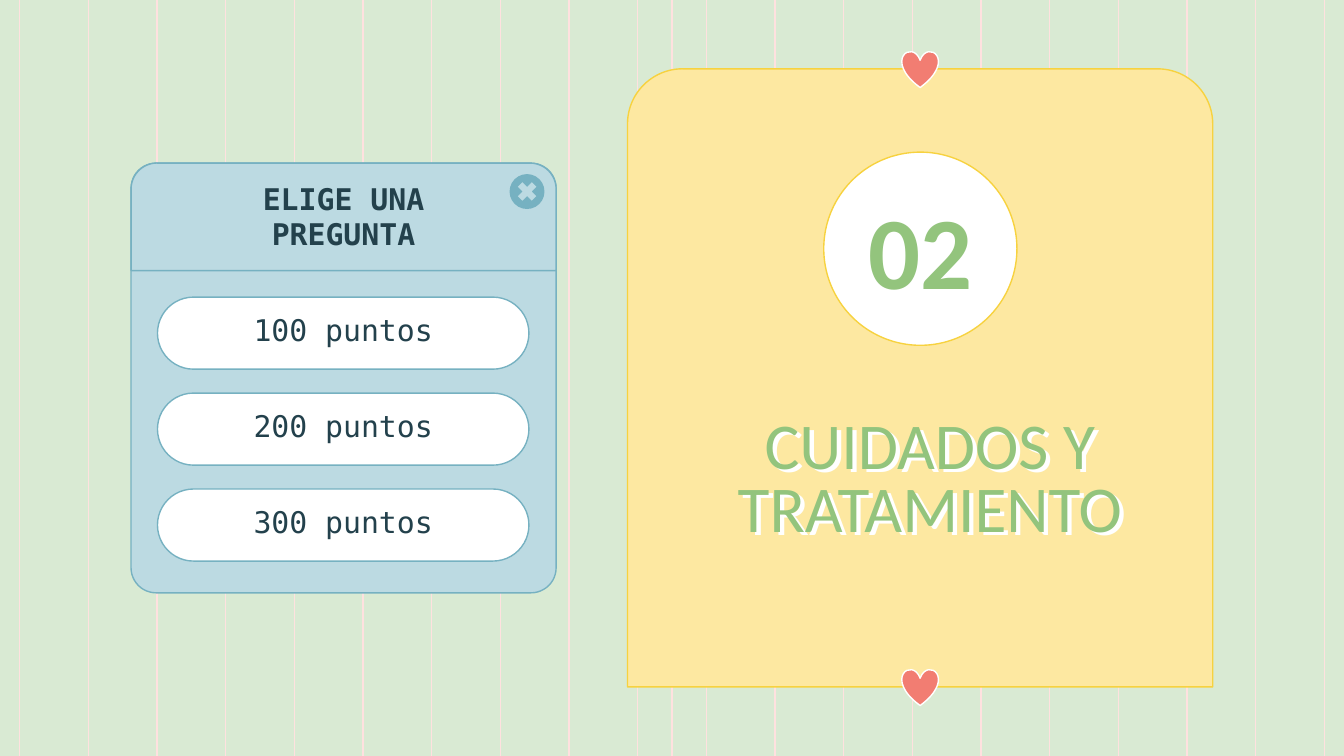
from lxml import etree
from pptx import Presentation
from pptx.dml.color import RGBColor
from pptx.enum.shapes import MSO_CONNECTOR, MSO_SHAPE
from pptx.enum.text import MSO_ANCHOR, PP_ALIGN
from pptx.oxml.ns import qn
from pptx.util import Pt

STRAIGHT = MSO_CONNECTOR.STRAIGHT
ROUNDED = MSO_SHAPE.ROUNDED_RECTANGLE
ROUNDED_TOP = MSO_SHAPE.ROUND_2_SAME_RECTANGLE
HEART = MSO_SHAPE.HEART
OVAL = MSO_SHAPE.OVAL
CROSS = MSO_SHAPE.MATH_MULTIPLY
CENTER = PP_ALIGN.CENTER
MIDDLE = MSO_ANCHOR.MIDDLE

MINT = RGBColor(0xD9, 0xEA, 0xD3)
STRIPE = RGBColor(0xFF, 0xE1, 0xDF)
CREAM = RGBColor(0xFD, 0xE8, 0xA1)
GOLD = RGBColor(0xF7, 0xD2, 0x3F)
CORAL = RGBColor(0xF2, 0x7D, 0x72)
WHITE = RGBColor(0xFF, 0xFF, 0xFF)
SKY = RGBColor(0xBC, 0xDA, 0xE2)
TEAL = RGBColor(0x76, 0xB1, 0xC1)
NAVY = RGBColor(0x23, 0x41, 0x4C)
GREEN = RGBColor(0x93, 0xC4, 0x7D)

SLIDE_WIDTH, SLIDE_HEIGHT = 720, 405
LINE_WIDTH = 0.75
MONO = "DejaVu Sans Mono"
SANS = "Calibri"


def add_stripe(slide, x):
    """Draw one vertical background line over the full slide height."""
    stripe = slide.shapes.add_connector(STRAIGHT, Pt(x), Pt(0), Pt(x), Pt(SLIDE_HEIGHT))
    stripe.line.color.rgb = STRIPE
    stripe.line.width = Pt(LINE_WIDTH)
    etree.SubElement(stripe._element.spPr, qn("a:effectLst"))


def add_panel(slide, kind, box, fill, line=None, adjustments=()):
    """Draw a filled preset shape, outlined when a line colour is given."""
    shape = slide.shapes.add_shape(kind, *map(Pt, box))
    shape.shadow.inherit = False
    shape.fill.solid()
    shape.fill.fore_color.rgb = fill
    if line is None:
        shape.line.fill.background()
    else:
        shape.line.color.rgb = line
        shape.line.width = Pt(LINE_WIDTH)
    for index, value in enumerate(adjustments):
        shape.adjustments[index] = value
    return shape


def write_text(shape, text, *, size, font, color, bold=False, spacing=None,
               insets=(7.2, 7.2, 7.2, 7.2)):
    """Fill a shape with one centred, formatted paragraph."""
    frame = shape.text_frame
    frame.word_wrap = True
    frame.vertical_anchor = MIDDLE
    (frame.margin_left, frame.margin_top,
     frame.margin_right, frame.margin_bottom) = map(Pt, insets)
    paragraph = frame.paragraphs[0]
    paragraph.alignment = CENTER
    if spacing:
        paragraph.line_spacing = spacing
    run = paragraph.add_run()
    run.text = text
    run.font.size = Pt(size)
    run.font.name = font
    run.font.bold = bold
    run.font.color.rgb = color


def add_white_shadow(shape):
    """Give the text of an unfilled shape a hard white shadow."""
    effects = etree.SubElement(shape._element.spPr, qn("a:effectLst"))
    shadow = etree.SubElement(effects, qn("a:outerShdw"), dist="38100",
                              dir="2400000", algn="bl", rotWithShape="0")
    etree.SubElement(shadow, qn("a:srgbClr"), val=str(WHITE))


def add_background(slide):
    """Colour the slide and draw its evenly spaced stripes and centre line."""
    slide.background.fill.solid()
    slide.background.fill.fore_color.rgb = MINT
    add_stripe(slide, SLIDE_WIDTH / 2)
    for index in range(20):
        add_stripe(slide, 10.6 + 36.78 * index)


def add_question_window(slide):
    """Draw the window with its header, close button and score options."""
    add_panel(slide, ROUNDED, (70.2, 87.4, 227.7, 230.2), SKY, TEAL, [0.059])
    header = add_panel(slide, ROUNDED_TOP, (70.2, 87.4, 227.7, 57.6), SKY, TEAL, [0.242, 0])
    write_text(header, "ELIGE UNA PREGUNTA", size=16, font=MONO, color=NAVY,
               bold=True, insets=(28.8, 2.2, 28.8, 7.2))
    add_panel(slide, OVAL, (273, 93.3, 18.7, 18.7), TEAL)
    add_panel(slide, CROSS, (275.2, 95.4, 14.4, 14.4), SKY, adjustments=[0.235])
    for index in range(3):
        option = add_panel(slide, ROUNDED, (84.4, 159.2 + 51.4 * index, 199, 38.6),
                           WHITE, TEAL, [0.5])
        write_text(option, f"{100 * (index + 1)} puntos", size=16, font=MONO,
                   color=NAVY, insets=(7.2, 3.6, 7.2, 7.2))


def add_section_card(slide):
    """Draw the card with hearts, section number and section title."""
    add_panel(slide, ROUNDED_TOP, (336.2, 36.9, 313.5, 331.1), CREAM, GOLD, [0.094, 0])
    for top in (27.4, 358.5):
        add_panel(slide, HEART, (483.2, top, 19.5, 19.5), CORAL, WHITE)
    add_panel(slide, OVAL, (441.3, 81.5, 103.5, 103.5), WHITE, GOLD)
    title = slide.shapes.add_textbox(Pt(348.5), Pt(221.8), Pt(299.5), Pt(72.7))
    write_text(title, "CUIDADOS Y TRATAMIENTO", size=35, font=SANS, color=GREEN, spacing=0.8)
    add_white_shadow(title)
    number = slide.shapes.add_textbox(Pt(441.3), Pt(96.5), Pt(103.5), Pt(72.7))
    write_text(number, "02", size=55, font=SANS, color=GREEN, bold=True)


def main():
    """Build and save the slide."""
    presentation = Presentation()
    presentation.slide_width = Pt(SLIDE_WIDTH)
    presentation.slide_height = Pt(SLIDE_HEIGHT)
    slide = presentation.slides.add_slide(presentation.slide_layouts[6])
    add_background(slide)
    add_section_card(slide)
    add_question_window(slide)
    presentation.save("out.pptx")


if __name__ == "__main__":
    main()
